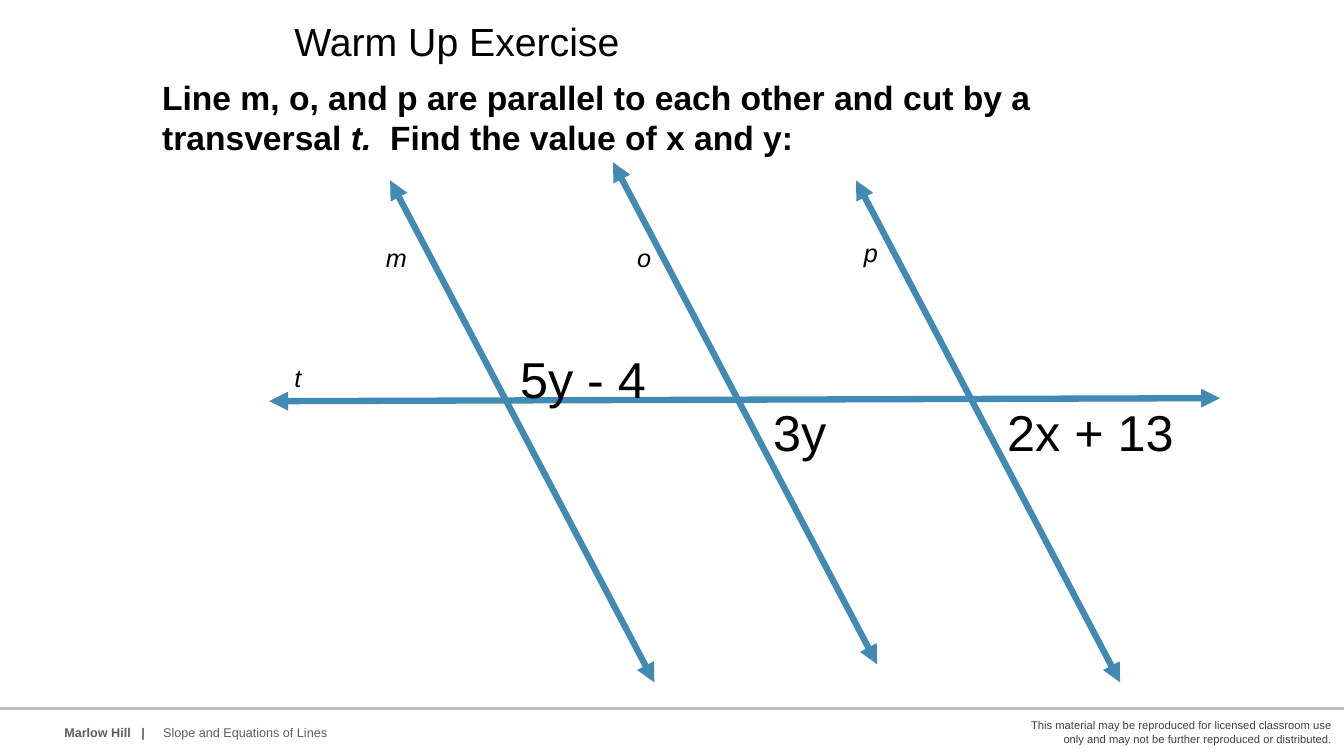
import pptx
import pptx.dml.color
import pptx.enum.shapes
import pptx.enum.text
import pptx.oxml.ns
import pptx.util
from lxml import etree

Inches = pptx.util.Inches
COLORS = {"ink": "000000", "line": "418AB3", "rule": "BFBFBF", "footer": "5E5E5E", "notice": "404040"}
ALIGN = pptx.enum.text.PP_ALIGN
ANCHOR = pptx.enum.text.MSO_ANCHOR


def rgb(name):
    """Return the named colour."""
    return pptx.dml.color.RGBColor.from_string(COLORS[name])


def write(frame, runs, size, color="ink", align=ALIGN.LEFT, anchor=ANCHOR.TOP):
    """Fill a text frame with (text, font format) runs."""
    layout = {"word_wrap": True, "auto_size": pptx.enum.text.MSO_AUTO_SIZE.NONE, "vertical_anchor": anchor}
    for key, value in layout.items():
        setattr(frame, key, value)
    paragraph = frame.paragraphs[0]
    paragraph.alignment = align
    for text, extra in runs:
        run = paragraph.add_run()
        run.text = text
        font_format = {"name": "Arial", "size": pptx.util.Pt(size), "bold": False, "italic": False} | extra
        for key, value in font_format.items():
            setattr(run.font, key, value)
        run.font.color.rgb = rgb(color)


def add_text(slide, box, runs, size, **options):
    """Add a text box in the given box."""
    write(slide.shapes.add_textbox(*map(Inches, box)).text_frame, runs, size, **options)


def add_line(slide, start, end, color, width, arrows=False):
    """Draw a straight line, with arrowheads at both ends if asked."""
    line = slide.shapes.add_connector(
        pptx.enum.shapes.MSO_CONNECTOR.STRAIGHT, *map(Inches, (*start, *end)))
    line.line.color.rgb = rgb(color)
    line.line.width = pptx.util.Pt(width)
    if arrows:
        for tag in ("a:headEnd", "a:tailEnd"):
            etree.SubElement(line.line._get_or_add_ln(), pptx.oxml.ns.qn(tag), type="triangle")
    etree.SubElement(line._element.spPr, pptx.oxml.ns.qn("a:effectLst"))


def build_footer(slide, box):
    """Place the rule, source, lesson name and reproduction notice."""
    left, top, width, height = box
    add_line(slide, (left, top), (left + width, top), "rule", 1.75)
    add_text(slide, (left + 0.54, top + 0.11, 1.13, 0.36),
             [("Marlow Hill   |", {"bold": True})], 9, color="footer")
    add_text(slide, (left + 1.52, top + 0.11, 5.13, 0.36),
             [("Slope and Equations of Lines", {})], 9, color="footer")
    notice = ("This material may be reproduced for licensed classroom use "
              "only and may not be further reproduced or distributed.")
    add_text(slide, (left + width - 3.42, top - 0.03, 3.4, 0.52), [(notice, {})], 8,
             color="notice", align=ALIGN.RIGHT, anchor=ANCHOR.MIDDLE)


def build_heading(slide, box):
    """Place the title and the question below it."""
    left, top, width, height = box
    title = slide.shapes.title
    placement = {"left": left + 1.31, "top": top, "width": 5.61, "height": 0.57}
    for key, value in placement.items():
        setattr(title, key, Inches(value))
    write(title.text_frame, [("Warm Up Exercise", {})], 28)
    bold = {"bold": True}
    question = [("Line m, o, and p are parallel to each other and cut by a transversal ", bold),
                ("t.", {"bold": True, "italic": True}),
                ("  Find the value of x and y:", bold)]
    add_text(slide, (left, top + 0.59, width, height - 0.59), question, 24)


def build_diagram(slide, box):
    """Draw the transversal, the three parallels and their labels."""
    left, top, width, height = box
    names = [("m", 1.06, 0.75), ("o", 3.55, 0.75), ("p", 5.8, 0.7), ("t", 0.15, 1.94)]
    for name, x, y in names:
        add_text(slide, (left + x, top + y, 0.58, 0.4), [(name, {"italic": True})], 18)
    add_line(slide, (left, top + 2.37), (left + width, top + 2.34), "line", 4.5, arrows=True)
    for x, y in [(1.2, 0.18), (3.41, 0), (5.82, 0.18)]:
        add_line(slide, (left + x, top + y), (left + x + 2.62, top + y + 4.98), "line", 4.5, arrows=True)
    angles = [("5y - 4", 2.39, 1.79, 1.74), ("3y", 4.9, 2.32, 1.74), ("2x + 13", 7.22, 2.32, 2.23)]
    for angle, x, y, label_width in angles:
        add_text(slide, (left + x, top + y, label_width, 0.71), [(angle, {})], 36)


def main():
    """Build and save the warm-up slide."""
    deck = pptx.Presentation()
    deck.slide_width, deck.slide_height = Inches(13.33), Inches(7.5)
    slide = deck.slides.add_slide(deck.slide_layouts[5])
    build_footer(slide, (0, 7.03, 13.33, 0.47))
    build_heading(slide, (1.51, 0.12, 9.95, 1.5))
    build_diagram(slide, (2.67, 1.61, 9.43, 5.16))
    deck.save("out.pptx")


if __name__ == "__main__":
    main()
